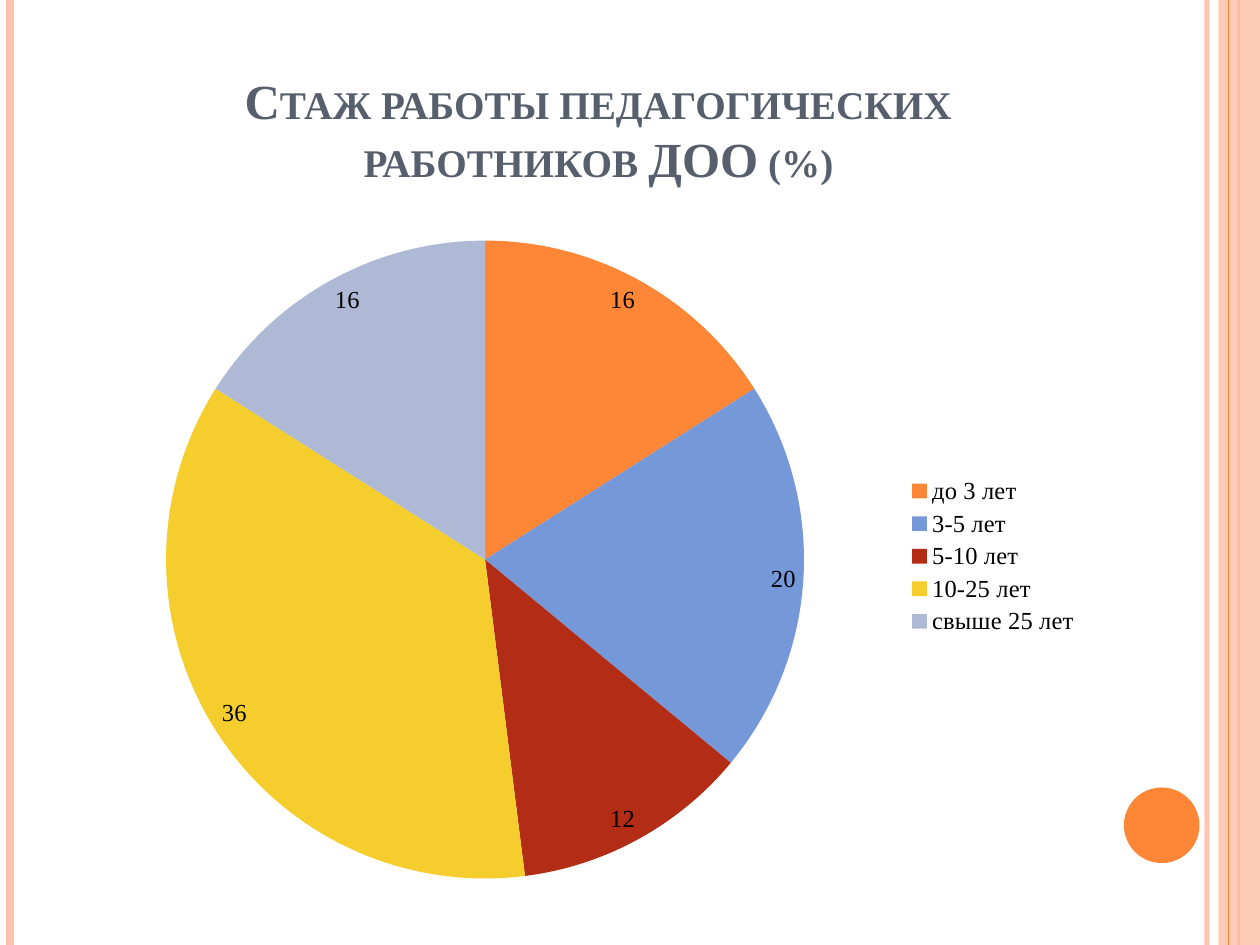
from lxml import etree
from pptx import Presentation
from pptx.chart.data import CategoryChartData
from pptx.dml.color import RGBColor
from pptx.enum.chart import XL_CHART_TYPE, XL_LABEL_POSITION, XL_LEGEND_POSITION
from pptx.enum.shapes import MSO_CONNECTOR, MSO_SHAPE
from pptx.enum.text import MSO_ANCHOR, PP_ALIGN
from pptx.oxml.ns import qn
from pptx.util import Inches, Pt

COLORS = {"peach": "FEC3AE", "orange": "FE8637", "slate": "575F6D", "black": "000000",
          "blue": "7598D9", "red": "B32C16", "yellow": "F5CD2D", "lavender": "AEBAD5"}
FONT = "Times New Roman"
EXPERIENCE = [("до 3 лет", 16, "orange"), ("3-5 лет", 20, "blue"), ("5-10 лет", 12, "red"),
              ("10-25 лет", 36, "yellow"), ("свыше 25 лет", 16, "lavender")]


def rgb(name):
    return RGBColor.from_string(COLORS[name])


def set_alpha(fill, percent):
    color = fill._xPr.find(".//" + qn("a:srgbClr"))
    etree.SubElement(color, qn("a:alpha")).set("val", str(percent * 1000))


def add_stripe(s, x, height, color, width, alpha=100):
    line = s.shapes.add_connector(MSO_CONNECTOR.STRAIGHT, Inches(x), 0, Inches(x), Inches(height))
    line.line.color.rgb = rgb(color)
    line.line.width = Pt(width)
    if alpha < 100:
        set_alpha(line.line.fill, alpha)
    etree.SubElement(line._element.spPr, qn("a:effectLst"))


def add_solid(s, kind, box, color, alpha=100):
    sp = s.shapes.add_shape(kind, *map(Inches, box))
    sp.shadow.inherit = False
    sp.fill.solid()
    sp.fill.fore_color.rgb = rgb(color)
    sp.line.fill.background()
    if alpha < 100:
        set_alpha(sp.fill, alpha)


def add_decoration(s, width, height):
    add_stripe(s, width - 0.42, height, "peach", 3, 93)
    add_stripe(s, 0.08, height, "peach", 4.5)
    add_stripe(s, width - 0.17, height, "orange", 1.5)
    add_solid(s, MSO_SHAPE.RECTANGLE, (width - 0.33, 0, 0.33, height), "peach", 87)
    add_stripe(s, width - 0.25, height, "orange", 0.75)
    add_solid(s, MSO_SHAPE.OVAL, (width - 1.08, height - 1.25, 0.6, 0.6), "orange")


def set_title(s, box, lines):
    title = s.shapes.title
    title.left, title.top, title.width, title.height = map(Inches, box)
    tf = title.text_frame
    tf.word_wrap = True
    tf.vertical_anchor = MSO_ANCHOR.BOTTOM
    p = tf.paragraphs[0]
    p.alignment = PP_ALIGN.CENTER
    for i, line in enumerate(lines):
        if i:
            p.add_line_break()
        r = p.add_run()
        r.text = line
        r.font.name, r.font.size, r.font.bold = FONT, Pt(28), True
        r.font.color.rgb = rgb("slate")
        r._r.get_or_add_rPr().set("cap", "small")


def set_plot_layout(chart, x, y, w, h):
    area = chart._chartSpace.chart.plotArea
    for old in area.findall(qn("c:layout")):
        area.remove(old)
    layout = etree.Element(qn("c:layout"))
    area.insert(0, layout)
    manual = etree.SubElement(layout, qn("c:manualLayout"))
    values = {"layoutTarget": "inner", "xMode": "edge", "yMode": "edge",
              "x": x, "y": y, "w": w, "h": h}
    for tag, value in values.items():
        etree.SubElement(manual, qn("c:" + tag)).set("val", str(value))


def add_experience_chart(s, box):
    data = CategoryChartData()
    data.categories = [name for name, _, _ in EXPERIENCE]
    data.add_series("Series 1", [value for _, value, _ in EXPERIENCE])
    chart = s.shapes.add_chart(XL_CHART_TYPE.PIE, *map(Inches, box), data).chart
    chart.has_title = False
    chart.font.name, chart.font.size = FONT, Pt(14)
    chart.font.color.rgb = rgb("black")
    chart.has_legend = True
    chart.legend.position = XL_LEGEND_POSITION.RIGHT
    chart.legend.include_in_layout = False
    plot = chart.plots[0]
    plot.vary_by_categories = True
    for i, (_, _, color) in enumerate(EXPERIENCE):
        fill = plot.series[0].points[i].format.fill
        fill.solid()
        fill.fore_color.rgb = rgb(color)
    plot.has_data_labels = True
    labels = plot.data_labels
    labels.show_value = True
    labels.show_percentage = False
    labels.position = XL_LABEL_POSITION.INSIDE_END
    set_plot_layout(chart, 0.1, 0.03, 0.62, 0.95)


def main():
    prs = Presentation()
    prs.slide_width, prs.slide_height = Inches(10), Inches(7.5)
    s = prs.slides.add_slide(prs.slide_layouts[5])
    add_decoration(s, 10, 7.5)
    set_title(s, (0, 0.36, 9.5, 1.18), ["Стаж работы педагогических", "работников ДОО (%)"])
    add_experience_chart(s, (0.5, 1.75, 8.17, 5.33))
    prs.save("out.pptx")


if __name__ == "__main__":
    main()
